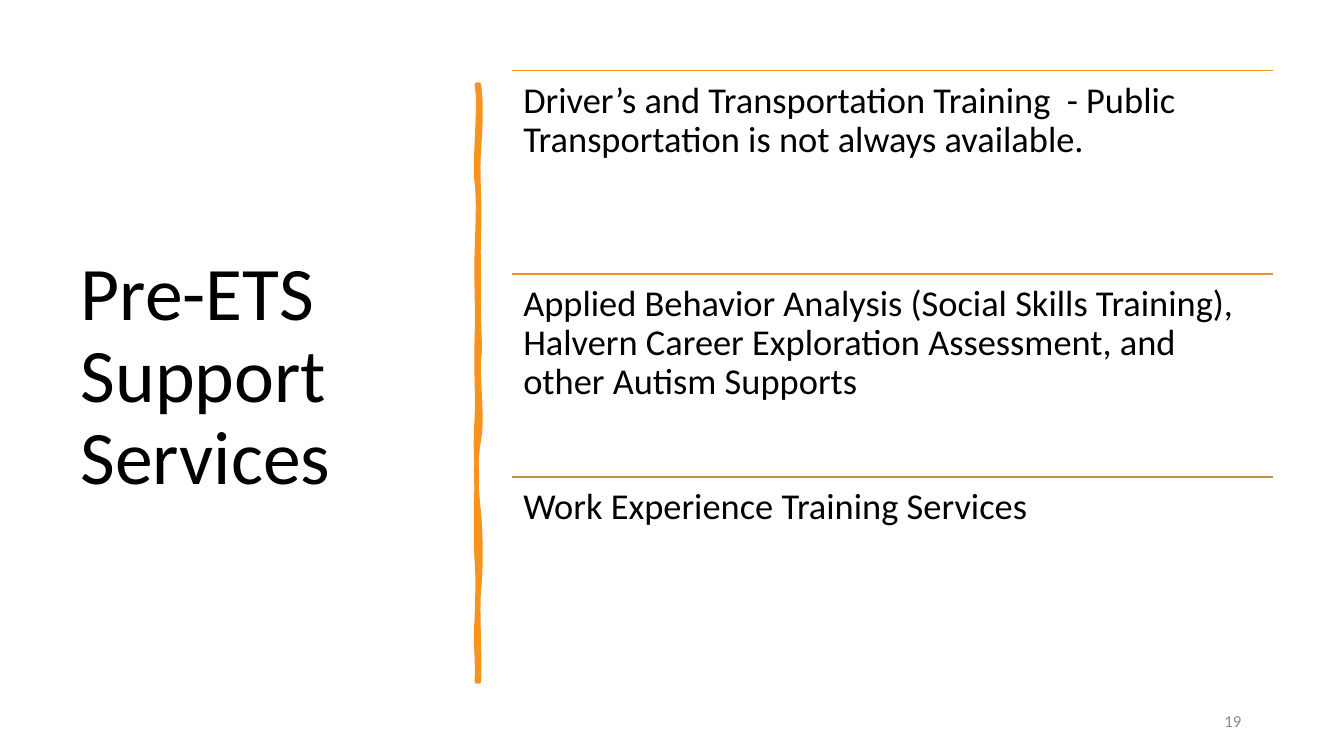
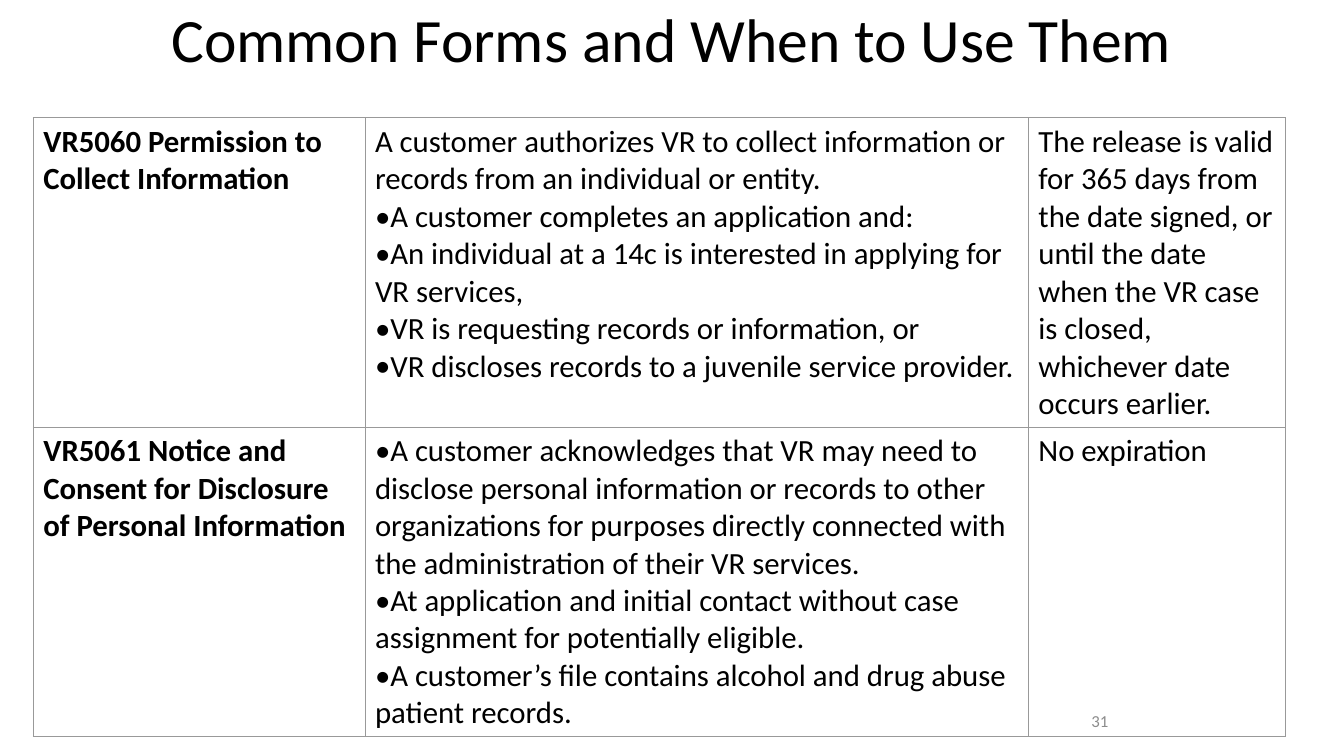
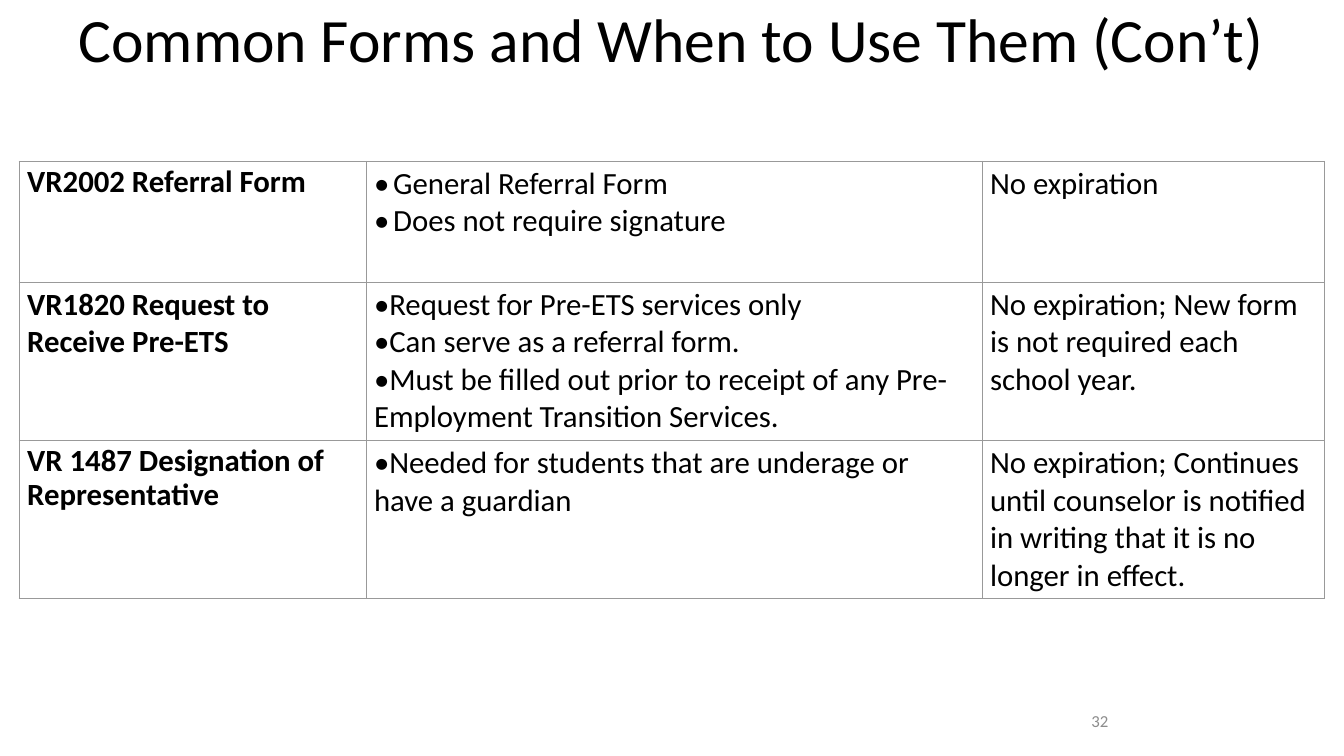
from dataclasses import dataclass

from lxml.etree import SubElement
from pptx import Presentation
from pptx.dml.color import RGBColor
from pptx.enum.shapes import MSO_CONNECTOR
from pptx.enum.text import MSO_ANCHOR, MSO_AUTO_SIZE, PP_ALIGN
from pptx.oxml import parse_xml
from pptx.oxml.ns import nsdecls, qn
from pptx.util import Inches, Pt


@dataclass(frozen=True)
class Theme:
    width: float = 13.33
    height: float = 7.5
    font: str = "Calibri"
    text: str = "000000"
    muted: str = "8C8C8C"
    border: str = "999999"
    accent: str = "F8931D"
    rules: tuple = ("F8931D", "E3902D", "CE8D3E")
    side_title: int = 54
    top_title: int = 44
    service: int = 26
    cell: int = 22
    page_number: int = 12
    tight: float = 0.9


THEME = Theme()
SIDES = ("left", "top", "right", "bottom")
TOP_TITLE = (0, 0, THEME.width, 0.84)
SIDE_TITLE = (0.7, 0.7, 3.74, 6.1)
PAGE_NUMBER = (9.41, 6.95, 3, 0.4)
HEADING = {"line_spacing": THEME.tight, "space_before": Pt(10)}

SERVICES = (
    "Driver’s and Transportation Training  - Public Transportation is not always available.",
    "Applied Behavior Analysis (Social Skills Training), Halvern Career Exploration "
    "Assessment, and other Autism Supports",
    "Work Experience Training Services",
)

# Divider edges: two control points and an end point per curve, in inches
DIVIDER_START = (4.75, 0.84)
DIVIDER_CURVES = (
    (4.77, 1.02, 4.77, 1.19, 4.75, 1.46),
    (4.73, 1.73, 4.76, 1.95, 4.75, 2.26),
    (4.74, 2.57, 4.75, 2.62, 4.75, 2.94),
    (4.74, 3.25, 4.77, 3.42, 4.75, 3.56),
    (4.73, 3.7, 4.79, 4.14, 4.75, 4.36),
    (4.71, 4.57, 4.72, 4.84, 4.75, 5.1),
    (4.77, 5.36, 4.77, 5.64, 4.75, 5.84),
    (4.73, 6.03, 4.76, 6.5, 4.75, 6.76),
    (4.74, 6.76, 4.73, 6.76, 4.73, 6.76),
    (4.74, 6.46, 4.71, 6.44, 4.73, 6.13),
    (4.74, 5.83, 4.74, 5.7, 4.73, 5.57),
    (4.72, 5.44, 4.72, 4.95, 4.73, 4.77),
    (4.73, 4.59, 4.71, 4.45, 4.73, 4.15),
    (4.74, 3.86, 4.72, 3.73, 4.73, 3.35),
    (4.74, 2.98, 4.72, 2.81, 4.73, 2.5),
    (4.74, 2.18, 4.75, 2, 4.73, 1.81),
    (4.7, 1.63, 4.77, 1.04, 4.73, 0.84),
)


@dataclass(frozen=True)
class Item:
    """A table paragraph with its own bullet, indent or spacing."""
    text: str
    bullet: bool = False
    hang: float = 0
    spacing: tuple = ()


def bullets(*texts, hang=0):
    return [Item(text, True, hang) for text in texts]


def heading(text):
    return [Item(text, spacing=tuple(HEADING.items()))]


COLLECT_AND_DISCLOSE = (
    (
        [Item("VR5060 Permission to Collect Information")],
        [Item("A customer authorizes VR to collect information or records from an "
              "individual or entity.")]
        + bullets(
            "A customer completes an application and:",
            "An individual at a 14c is interested in applying for VR services,",
            "VR is requesting records or information, or",
            "VR discloses records to a juvenile service provider."),
        [Item("The release is valid for 365 days from the date signed, or until the date "
              "when the VR case is closed, whichever date occurs earlier.")],
    ),
    (
        [Item("VR5061 Notice and Consent for Disclosure of Personal Information")],
        bullets(
            "A customer acknowledges that VR may need to disclose personal information or "
            "records to other organizations for purposes directly connected with the "
            "administration of their VR services.",
            "At application and initial contact without case assignment for potentially "
            "eligible.",
            "A customer’s file contains alcohol and drug abuse patient records."),
        [Item("No expiration")],
    ),
)

REFER_AND_REPRESENT = (
    (
        heading("VR2002 Referral Form"),
        bullets("General Referral Form", "Does not require signature", hang=0.19),
        [Item("No expiration")],
    ),
    (
        [Item("VR1820 Request to Receive Pre-ETS")],
        bullets(
            "Request for Pre-ETS services only",
            "Can serve as a referral form.",
            "Must be filled out prior to receipt of any Pre-Employment Transition Services."),
        [Item("No expiration; New form is not required each school year.")],
    ),
    (
        heading("VR 1487 Designation of Representative"),
        bullets("Needed for students that are underage or have a guardian"),
        [Item("No expiration; Continues until counselor is notified in writing that it is "
              "no longer in effect.")],
    ),
)


# Formatting helpers
def apply(target, values):
    for name, value in values.items():
        setattr(target, name, value)


def margins(horizontal, vertical):
    sizes = (horizontal, vertical) * 2
    return {f"margin_{side}": Inches(size) for side, size in zip(SIDES, sizes)}


def place(shape, area):
    names = ("left", "top", "width", "height")
    apply(shape, dict(zip(names, map(Inches, area))))


def write(para, text, size, color=THEME.text, bold=False, **layout):
    span = para.add_run()
    span.text = text
    apply(span.font, {"name": THEME.font, "size": Pt(size), "bold": bold})
    span.font.color.rgb = RGBColor.from_string(color)
    apply(para, layout)


# Slide elements
def add_page(deck, title, area, size, align):
    page = deck.slides.add_slide(deck.slide_layouts.get_by_name("Title Only"))
    place(page.shapes.title, area)
    frame = page.shapes.title.text_frame
    apply(frame, {"vertical_anchor": MSO_ANCHOR.MIDDLE, "word_wrap": True,
                  "auto_size": MSO_AUTO_SIZE.NONE})
    write(frame.paragraphs[0], title, size, alignment=align, line_spacing=THEME.tight)
    return page


def add_text(page, text, area, size, frame_format, color=THEME.text, **layout):
    box = page.shapes.add_textbox(*map(Inches, area))
    apply(box.text_frame, {"word_wrap": True, **frame_format})
    write(box.text_frame.paragraphs[0], text, size, color, **layout)


def add_page_number(page, number, align=PP_ALIGN.CENTER):
    add_text(page, str(number), PAGE_NUMBER, THEME.page_number,
             {"vertical_anchor": MSO_ANCHOR.MIDDLE}, THEME.muted, alignment=align)


def add_rule(page, left, top, width, color):
    rule = page.shapes.add_connector(
        MSO_CONNECTOR.STRAIGHT, *map(Inches, (left, top, left + width, top)))
    rule.line.color.rgb = RGBColor.from_string(color)
    rule.line.width = Pt(1)
    SubElement(rule._element.spPr, qn("a:effectLst"))


def bend(shape):
    """Turn every three straight segments into one cubic curve."""
    segments = list(shape._element.iter(qn("a:lnTo")))
    for first in range(0, len(segments), 3):
        group = segments[first:first + 3]
        curve = parse_xml(f'<a:cubicBezTo {nsdecls("a")}/>')
        group[0].addprevious(curve)
        for segment in group:
            curve.append(segment[0])
            segment.getparent().remove(segment)


def add_divider(page):
    builder = page.shapes.build_freeform(*map(Inches, DIVIDER_START))
    builder.add_line_segments([
        (Inches(curve[index]), Inches(curve[index + 1]))
        for curve in DIVIDER_CURVES for index in (0, 2, 4)])
    divider = builder.convert_to_shape()
    bend(divider)
    divider.shadow.inherit = False
    divider.fill.solid()
    for paint in (divider.fill.fore_color, divider.line.color):
        paint.rgb = RGBColor.from_string(THEME.accent)
    divider.line.width = Pt(3.25)


def add_services(page, left=5.08, top=0.7, width=7.55, height=6.05):
    pitch = height / len(SERVICES)
    for row, (text, color) in enumerate(zip(SERVICES, THEME.rules)):
        row_top = top + row * pitch
        add_rule(page, left, row_top, width, color)
        add_text(page, text, (left, row_top, width, pitch), THEME.service,
                 margins(0.11, 0.11), line_spacing=THEME.tight)


# Tables
def set_borders(cell):
    properties = cell._tc.get_or_add_tcPr()
    for index, side in enumerate("LRTB"):
        properties.insert(index, parse_xml(
            f'<a:ln{side} {nsdecls("a")} w="{Pt(0.75)}"><a:solidFill>'
            f'<a:srgbClr val="{THEME.border}"/></a:solidFill></a:ln{side}>'))


def set_bullet(para, hang):
    properties = para._p.get_or_add_pPr()
    properties.set("marL", str(Inches(hang)))
    properties.set("indent", str(-Inches(hang)))
    SubElement(properties, qn("a:buFont"), typeface=THEME.font)
    SubElement(properties, qn("a:buChar"), char="•")


def fill_cell(cell, items, bold, inset):
    cell.fill.background()
    set_borders(cell)
    apply(cell, margins(*inset))
    frame = cell.text_frame
    for index, item in enumerate(items):
        para = frame.add_paragraph() if index else frame.paragraphs[0]
        write(para, item.text, THEME.cell, bold=bold, **dict(item.spacing))
        if item.bullet:
            set_bullet(para, item.hang)


def add_forms(page, forms, left, top, widths, heights, inset):
    area = (left, top, sum(widths), sum(heights))
    table = page.shapes.add_table(len(heights), len(widths), *map(Inches, area)).table
    apply(table, {"first_row": False, "horz_banding": False})
    for column, width in zip(table.columns, widths):
        column.width = Inches(width)
    for row, height, contents in zip(table.rows, heights, forms):
        row.height = Inches(height)
        for index, (cell, items) in enumerate(zip(row.cells, contents)):
            fill_cell(cell, items, index == 0, inset)


def add_forms_page(deck, title, number, forms, **layout):
    page = add_page(deck, title, TOP_TITLE, THEME.top_title, PP_ALIGN.CENTER)
    add_page_number(page, number)
    add_forms(page, forms, **layout)


def main():
    deck = Presentation()
    apply(deck, {"slide_width": Inches(THEME.width), "slide_height": Inches(THEME.height)})

    # Support services
    page = add_page(deck, "Pre-ETS Support Services", SIDE_TITLE, THEME.side_title,
                    PP_ALIGN.LEFT)
    add_divider(page)
    add_page_number(page, 19, PP_ALIGN.RIGHT)
    add_services(page)

    # Common forms
    add_forms_page(deck, "Common Forms and When to Use Them", 31, COLLECT_AND_DISCLOSE,
                   left=0.33, top=1.17, widths=(3.29, 6.58, 2.55), heights=(3.07,) * 2,
                   inset=(0.1, 0.05))
    add_forms_page(deck, "Common Forms and When to Use Them (Con’t)", 32,
                   REFER_AND_REPRESENT, left=0.19, top=1.6, widths=(3.44, 6.11, 3.4),
                   heights=(1.2, 1.57, 1.57), inset=(0.08, 0.04))

    deck.save("out.pptx")


if __name__ == "__main__":
    main()
